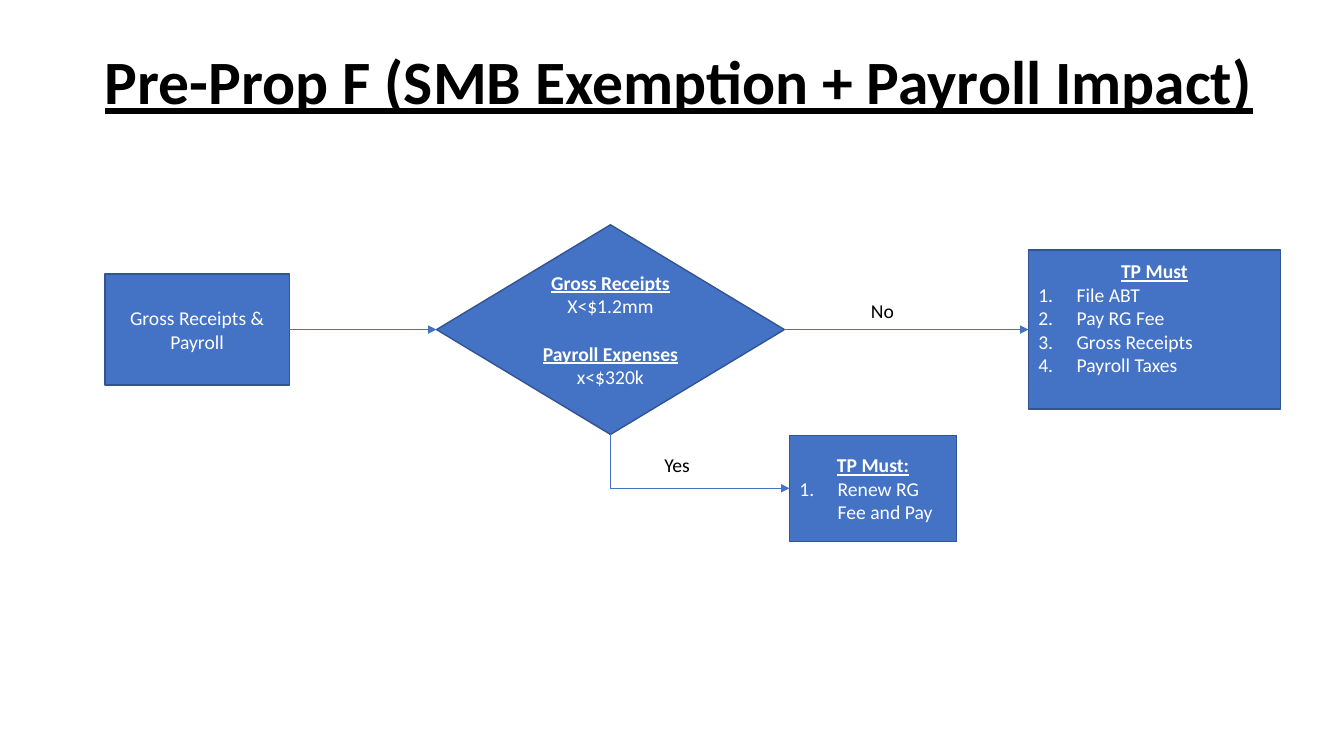
from lxml.etree import SubElement
from pptx import Presentation
from pptx.dml.color import RGBColor
from pptx.enum.shapes import MSO_CONNECTOR, MSO_SHAPE
from pptx.enum.text import MSO_ANCHOR, PP_ALIGN
from pptx.oxml.ns import qn
from pptx.util import Inches, Pt

COLORS = {"fill": "4472C4", "edge": "325491", "light": "FFFFFF", "dark": "000000"}
HEAD = {"bold": True, "underline": True}
AXIS_Y = 3.27
INDENT = 0.38
GAP = 17

NODES = {
    "input": (MSO_SHAPE.RECTANGLE, (1.04, AXIS_Y - 0.55, 1.83, 1.1), 0.05,
              [("body", "Gross Receipts & Payroll")]),
    "test": (MSO_SHAPE.DIAMOND, (4.33, AXIS_Y - 1.04, 3.45, 2.08), 0.05,
             [("head", "Gross Receipts"), ("body", "X<$1.2mm"),
              ("next head", "Payroll Expenses"), ("body", "x<$320k")]),
    "no": (MSO_SHAPE.RECTANGLE, (10.2, AXIS_Y - 0.79, 2.5, 1.58), 0.28,
           [("head", "TP Must"), ("item", "File ABT"), ("item", "Pay RG Fee"),
            ("item", "Gross Receipts"), ("item", "Payroll Taxes")]),
    "yes": (MSO_SHAPE.RECTANGLE, (7.83, 4.32, 1.66, 1.05), 0.05,
            [("head", "TP Must:"), ("item", "Renew RG Fee and Pay")]),
}
LINKS = [("input", 3, "test", 1), ("test", 3, "no", 1), ("test", 2, "yes", 1)]
LABELS = [
    ("No", (8.54, 2.92, 0.43, 0.34), 14, False, PP_ALIGN.LEFT, {}),
    ("Yes", (6.49, 4.44, 0.46, 0.34), 14, False, PP_ALIGN.LEFT, {}),
    ("Pre-Prop F (SMB Exemption + Payroll Impact)", (0.64, 0.38, 12.19, 0.84),
     44, True, PP_ALIGN.CENTER, HEAD),
]


def rgb(name):
    return RGBColor.from_string(COLORS[name])


def write(p, text, color, size=14, **fmt):
    r = p.add_run()
    r.text = text
    r.font.color.rgb = rgb(color)
    for key, value in {"name": "Calibri", "size": Pt(size), **fmt}.items():
        setattr(r.font, key, value)


def number(p):
    pPr = p._p.get_or_add_pPr()
    pPr.set("marL", str(Inches(INDENT)))
    pPr.set("indent", str(-Inches(INDENT)))
    SubElement(pPr, qn("a:buFont"), typeface="+mj-lt")
    SubElement(pPr, qn("a:buAutoNum"), type="arabicPeriod")


def add_node(s, kind, box, bottom, lines):
    sp = s.shapes.add_shape(kind, *map(Inches, box))
    sp.shadow.inherit = False
    sp.fill.solid()
    sp.fill.fore_color.rgb = rgb("fill")
    sp.line.color.rgb = rgb("edge")
    sp.line.width = Pt(1)
    tf = sp.text_frame
    tf.word_wrap = True
    tf.vertical_anchor = MSO_ANCHOR.MIDDLE
    tf.margin_bottom = Inches(bottom)
    for i, (role, text) in enumerate(lines):
        p = tf.add_paragraph() if i else tf.paragraphs[0]
        p.alignment = PP_ALIGN.LEFT if role == "item" else PP_ALIGN.CENTER
        if role == "next head":
            p.space_before = Pt(GAP)
        if role == "item":
            number(p)
        write(p, text, "light", **(HEAD if "head" in role else {}))
    return sp


def add_link(s, start, out, end, into):
    bent = out == 2
    kind = MSO_CONNECTOR.ELBOW if bent else MSO_CONNECTOR.STRAIGHT
    c = s.shapes.add_connector(kind, 0, 0, 0, 0)
    c.begin_connect(start, out)
    c.end_connect(end, into)
    c.line.color.rgb = rgb("fill")
    c.line.width = Pt(0.5)
    spPr = c._element.spPr
    SubElement(c.line._get_or_add_ln(), qn("a:tailEnd"), type="triangle")
    SubElement(spPr, qn("a:effectLst"))
    if bent:
        x, y, w, h = c.left, c.top, c.width, c.height
        c.left, c.top = x + (w - h) // 2, y + (h - w) // 2
        c.width, c.height = h, w
        spPr.find(qn("a:xfrm")).set("rot", "16200000")
        spPr.find(qn("a:xfrm")).set("flipH", "1")
        spPr.find(qn("a:prstGeom")).set("prst", "bentConnector2")


def add_label(s, text, box, size, wrap, align, fmt):
    tf = s.shapes.add_textbox(*map(Inches, box)).text_frame
    tf.word_wrap = wrap
    p = tf.paragraphs[0]
    p.alignment = align
    write(p, text, "dark", size, **fmt)


def main():
    prs = Presentation()
    prs.slide_width, prs.slide_height = Inches(13.33), Inches(7.5)
    s = prs.slides.add_slide(prs.slide_layouts[6])
    nodes = {name: add_node(s, *node) for name, node in NODES.items()}
    for start, out, end, into in LINKS:
        add_link(s, nodes[start], out, nodes[end], into)
    for label in LABELS:
        add_label(s, *label)
    prs.save("out.pptx")


if __name__ == "__main__":
    main()
